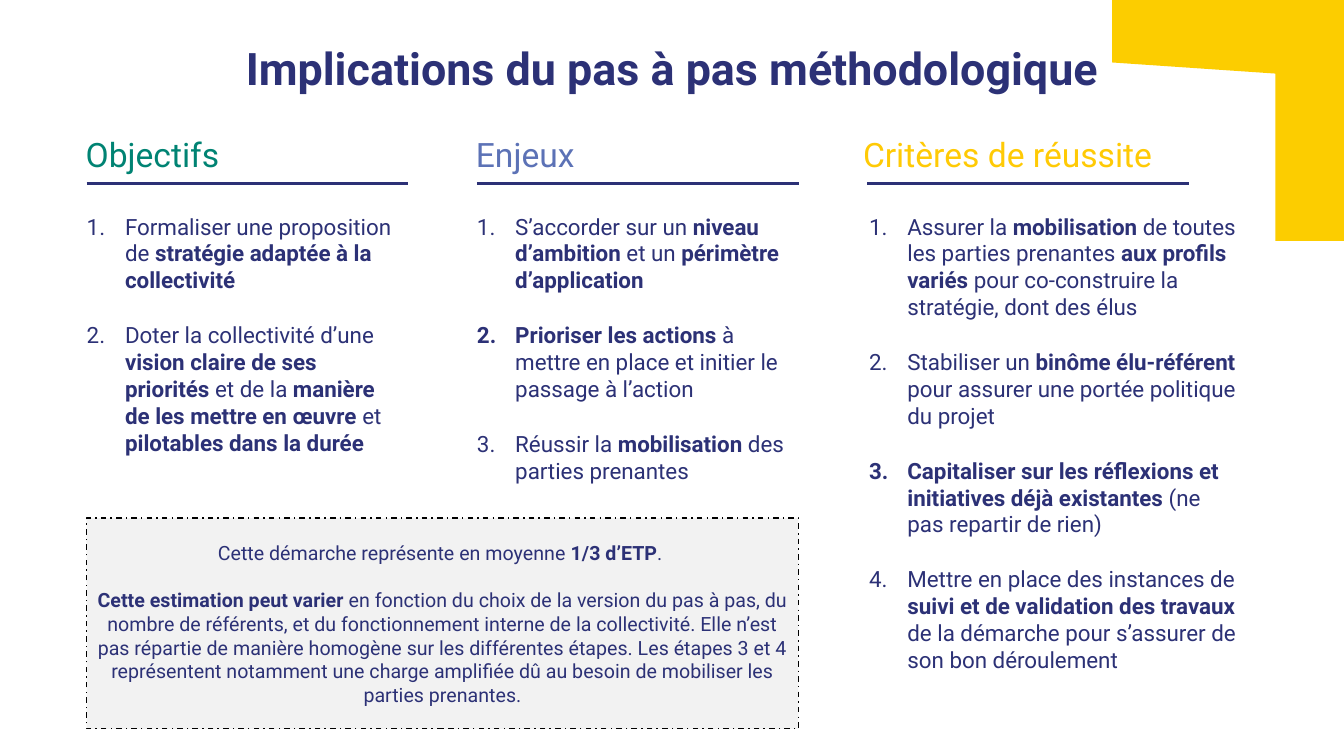
from lxml import etree
from pptx import Presentation
from pptx.dml.color import RGBColor
from pptx.enum.dml import MSO_LINE
from pptx.enum.shapes import MSO_CONNECTOR, MSO_SHAPE
from pptx.enum.text import MSO_ANCHOR, PP_ALIGN
from pptx.oxml.ns import qn
from pptx.util import Inches, Pt

LEFT, CENTER = PP_ALIGN.LEFT, PP_ALIGN.CENTER
TOP, MIDDLE = MSO_ANCHOR.TOP, MSO_ANCHOR.MIDDLE
DASH_DOT = MSO_LINE.DASH_DOT
STRAIGHT, RECTANGLE = MSO_CONNECTOR.STRAIGHT, MSO_SHAPE.RECTANGLE

FONT = "Roboto"
COLORS = {
    "navy": "2C3176",
    "green": "008373",
    "blue": "5C72B6",
    "gold": "FFCA05",
    "yellow": "FCCD00",
    "grey": "F2F2F2",
    "black": "000000",
}

# Column rule: left edge of the underline, then a fixed pitch
COLUMN_LEFT, COLUMN_PITCH, RULE_WIDTH = 0.86, 3.87, 3.19

# Heading, colour, heading left, list left, list width, items (** marks bold)
COLUMNS = [
    ("Objectifs", "green", 0.85, 0.85, 3.12, [
        "Formaliser une proposition de **stratégie adaptée à la collectivité**",
        "Doter la collectivité d’une **vision claire de ses priorités **et de la "
        "**manière de les mettre en œuvre **et **pilotables dans la durée**",
    ]),
    ("Enjeux", "blue", 4.72, 4.72, 3.12, [
        "S’accorder sur un **niveau d’ambition **et un **périmètre d’application**",
        "**Prioriser les actions **à mettre en place et initier le passage à l’action",
        "Réussir la **mobilisation **des parties prenantes",
    ]),
    ("Critères de réussite", "gold", 8.56, 8.61, 3.67, [
        "Assurer la **mobilisation **de toutes les parties prenantes "
        "**aux profils variés **pour co-construire la stratégie, dont des élus",
        "Stabiliser un **binôme élu-référent **pour assurer une portée politique du projet",
        "**Capitaliser sur les réflexions et initiatives déjà existantes **"
        "(ne pas repartir de rien)",
        "Mettre en place des instances de **suivi et de validation des travaux** "
        "de la démarche pour s’assurer de son bon déroulement",
    ]),
]

ESTIMATE = [
    "Cette démarche représente en moyenne **1/3 d’ETP**. ",
    "**Cette estimation peut varier **en fonction du choix de la version du pas à pas, "
    "du nombre de référents, et du fonctionnement interne de la collectivité. Elle n’est "
    "pas répartie de manière homogène sur les différentes étapes. Les étapes 3 et 4 "
    "représentent notamment une charge amplifiée dû au besoin de mobiliser les parties "
    "prenantes.",
]


def rgb(name):
    return RGBColor.from_string(COLORS[name])


def number_paragraph(paragraph):
    properties = paragraph._p.get_or_add_pPr()
    properties.set("marL", str(Inches(0.39)))
    properties.set("indent", str(Inches(-0.38)))
    bullet = etree.SubElement(properties, qn("a:buAutoNum"))
    bullet.set("type", "arabicPeriod")


def write_text(frame, lines, *, size, color="navy", align=LEFT, anchor=TOP,
               gap=0, numbered=False):
    """Write one paragraph per line; text between ** marks is bold."""
    frame.word_wrap = True
    frame.vertical_anchor = anchor
    for index, line in enumerate(lines):
        paragraph = frame.add_paragraph() if index else frame.paragraphs[0]
        paragraph.alignment = align
        if index:
            paragraph.space_before = Pt(gap)
        if numbered:
            number_paragraph(paragraph)
        for part, text in enumerate(line.split("**")):
            if text:
                run = paragraph.add_run()
                run.text = text
                run.font.name = FONT
                run.font.size = Pt(size)
                run.font.bold = part % 2 == 1
                run.font.color.rgb = rgb(color)


def add_text(slide, left, top, width, height, lines, **text_format):
    box = slide.shapes.add_textbox(
        Inches(left), Inches(top), Inches(width), Inches(height))
    frame = box.text_frame
    frame.margin_left = frame.margin_right = frame.margin_bottom = 0
    frame.margin_top = Inches(0.02)
    write_text(frame, lines, **text_format)
    return frame


def add_rule(slide, left, top, width):
    rule = slide.shapes.add_connector(
        STRAIGHT, Inches(left), Inches(top), Inches(left + width), Inches(top))
    rule.line.color.rgb = rgb("navy")
    rule.line.width = Pt(2)
    etree.SubElement(rule._element.spPr, qn("a:effectLst"))


def add_corner(slide):
    points = [(13.33, 0), (11.03, 0), (11.03, 0.62), (12.65, 0.73),
              (12.65, 2.39), (13.33, 2.39)]
    start, *others = [(Inches(x), Inches(y)) for x, y in points]
    builder = slide.shapes.build_freeform(*start)
    builder.add_line_segments(others, close=True)
    corner = builder.convert_to_shape()
    corner.shadow.inherit = False
    corner.fill.solid()
    corner.fill.fore_color.rgb = rgb("yellow")
    corner.line.fill.background()


def add_estimate(slide):
    panel = slide.shapes.add_shape(
        RECTANGLE, Inches(0.86), Inches(5.14), Inches(7.06), Inches(2.09))
    panel.shadow.inherit = False
    panel.fill.solid()
    panel.fill.fore_color.rgb = rgb("grey")
    panel.line.color.rgb = rgb("black")
    panel.line.width = Pt(1)
    panel.line.dash_style = DASH_DOT
    write_text(panel.text_frame, ESTIMATE, size=14, align=CENTER,
               anchor=MIDDLE, gap=17)


def main():
    presentation = Presentation()
    presentation.slide_width = Inches(13.33)
    presentation.slide_height = Inches(7.5)
    slide = presentation.slides.add_slide(presentation.slide_layouts[6])

    # Decoration and title
    add_corner(slide)
    add_text(slide, 1.39, 0.38, 10.56, 0.57,
             ["**Implications du pas à pas méthodologique**"], size=32, align=CENTER)

    # Three columns: heading, underline, numbered list
    for index, (heading, color, heading_left, list_left, width, items) in enumerate(COLUMNS):
        add_text(slide, heading_left, 1.31, 4.13, 0.42, [heading], size=24, color=color)
        add_rule(slide, COLUMN_LEFT + index * COLUMN_PITCH, 1.82, RULE_WIDTH)
        add_text(slide, list_left, 2.09, width, 2.78 if index < 2 else 5.33, items,
                 size=16, gap=20, numbered=True)

    # Workload estimate
    add_estimate(slide)

    presentation.save("out.pptx")


if __name__ == "__main__":
    main()
